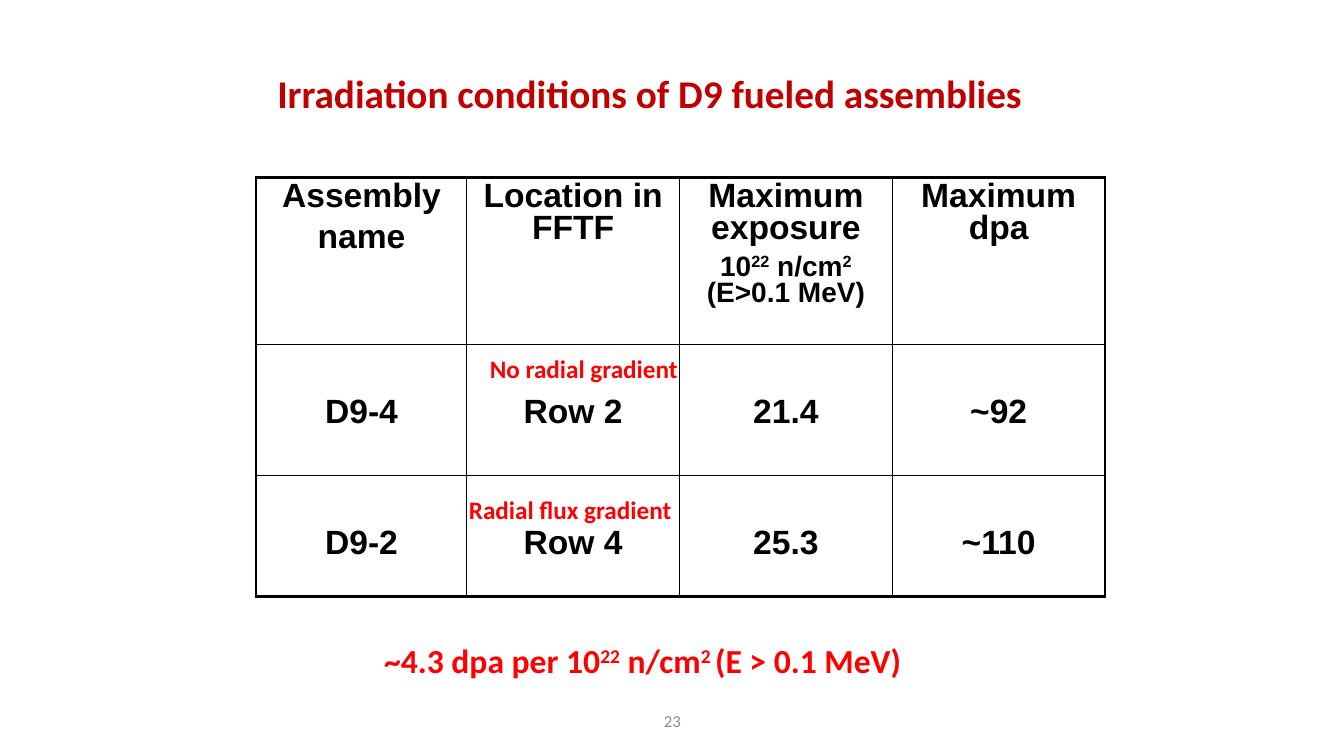
from dataclasses import dataclass

from lxml.etree import SubElement
from pptx import Presentation
from pptx.dml.color import RGBColor
from pptx.enum.text import MSO_ANCHOR as Anchor, PP_ALIGN as Align
from pptx.oxml.ns import qn
from pptx.util import Inches, Pt


@dataclass(frozen=True)
class Theme:
    heading: str = "C00000"
    accent: str = "FF0000"
    ink: str = "000000"
    muted: str = "8C8C8C"
    body_font: str = "Calibri"
    table_font: str = "Arial"
    title_size: int = 28
    text_size: int = 24
    unit_size: int = 20
    label_size: int = 18
    number_size: int = 12
    outer_line: float = 2.25
    inner_line: float = 1


class SlideBuilder:
    """Places elements on a grid of 0.1 inch columns and rows."""

    STEP = 0.1

    def __init__(self, deck, theme):
        self.theme = theme
        self.slide = deck.slides.add_slide(deck.slide_layouts[5])

    def grid(self, *cells):
        return [Inches(cell * self.STEP) for cell in cells]

    def add_runs(self, paragraph, content, size, color, font, bold=True):
        """Fill a paragraph; every second part between ^ marks is superscript."""
        for index, part in enumerate(content.split("^")):
            run = paragraph.add_run()
            run.text = part
            run.font.size = Pt(size)
            run.font.bold = bold
            run.font.name = font
            run.font.color.rgb = RGBColor.from_string(color)
            if index % 2:
                run._r.get_or_add_rPr().set("baseline", "30000")

    def title(self, content, area):
        heading = self.slide.shapes.title
        heading.left, heading.top, heading.width, heading.height = self.grid(*area)
        heading.text_frame.vertical_anchor = Anchor.MIDDLE
        line = heading.text_frame.paragraphs[0]
        line.alignment = Align.LEFT
        line.line_spacing = 0.9
        self.add_runs(line, content, self.theme.title_size, self.theme.heading,
                      self.theme.body_font)

    def text(self, content, area, size, color, bold=True, align=Align.LEFT,
             anchor=Anchor.TOP, indent=1):
        frame = self.slide.shapes.add_textbox(*self.grid(*area)).text_frame
        frame.word_wrap = True
        frame.vertical_anchor = anchor
        frame.margin_left = self.grid(indent)[0]
        frame.paragraphs[0].alignment = align
        self.add_runs(frame.paragraphs[0], content, size, color,
                      self.theme.body_font, bold)

    def border(self, cell, side, width):
        edge = SubElement(cell._tc.get_or_add_tcPr(), qn(f"a:ln{side}"),
                          w=str(Pt(width)))
        fill = SubElement(edge, qn("a:solidFill"))
        SubElement(fill, qn("a:srgbClr"), val=self.theme.ink)

    def cell(self, cell, lines, drop):
        cell.margin_top = self.grid(drop)[0]
        frame = cell.text_frame
        for index, (content, size) in enumerate(lines):
            line = frame.add_paragraph() if index else frame.paragraphs[0]
            line.alignment = Align.CENTER
            line.line_spacing = 0.85
            if index:
                line.space_before = Pt(6.5)
            self.add_runs(line, content, size, self.theme.ink,
                          self.theme.table_font)

    def table(self, header, records, corner, widths, heights):
        rows = [header] + [[[(value, self.theme.text_size)] for value in record]
                           for record in records]
        area = self.grid(*corner, sum(widths), sum(heights))
        table = self.slide.shapes.add_table(len(rows), len(widths), *area).table
        table.first_row = table.horz_banding = False
        for column, width in zip(table.columns, self.grid(*widths)):
            column.width = width
        for row, height in zip(table.rows, self.grid(*heights)):
            row.height = height
        last_row, last_column = len(rows) - 1, len(widths) - 1
        for r, row in enumerate(rows):
            for c, lines in enumerate(row):
                cell = table.cell(r, c)
                self.cell(cell, lines, drop=5.3 if r else 0.5)
                outer = {"L": c == 0, "R": c == last_column,
                         "T": r == 0, "B": r == last_row}
                for side, is_outer in outer.items():
                    self.border(cell, side, self.theme.outer_line if is_outer
                                else self.theme.inner_line)
                cell.fill.background()


def main():
    deck = Presentation()
    deck.slide_width, deck.slide_height = Inches(13.33), Inches(7.5)
    theme = Theme()
    page = SlideBuilder(deck, theme)

    # Title and page number
    page.title("Irradiation conditions of D9 fueled assemblies",
               (26.5, 3.3, 77.8, 12.5))
    page.text("23", (44.2, 69.5, 45, 4), theme.number_size, theme.muted,
              bold=False, align=Align.CENTER, anchor=Anchor.MIDDLE)

    # Irradiation table
    large = theme.text_size
    header = [
        [("Assembly", large), ("name", large)],
        [("Location in FFTF", large)],
        [("Maximum exposure", large),
         ("10^22^ n/cm^2^ (E>0.1 MeV)", theme.unit_size)],
        [("Maximum dpa", large)],
    ]
    assemblies = [
        ("D9-4", "Row 2", "21.4", "~92"),
        ("D9-2", "Row 4", "25.3", "~110"),
    ]
    page.table(header, assemblies, corner=(25.4, 17.6),
               widths=(20.9, 21.1, 21.1, 21.1), heights=(16.6, 13, 12))

    # Conversion rule below the table
    page.text("~4.3 dpa per 10^22^ n/cm^2 ^(E > 0.1 MeV)", (23.5, 63, 86.1, 5),
              theme.text_size, theme.accent, indent=14.6)

    # Gradient labels over the location column
    page.text("Radial flux gradient", (45, 48.5, 24.5, 4), theme.label_size,
              theme.accent, indent=1.5)
    page.text("No radial gradient", (47.6, 34.6, 21.9, 4), theme.label_size,
              theme.accent)

    deck.save("out.pptx")


if __name__ == "__main__":
    main()
